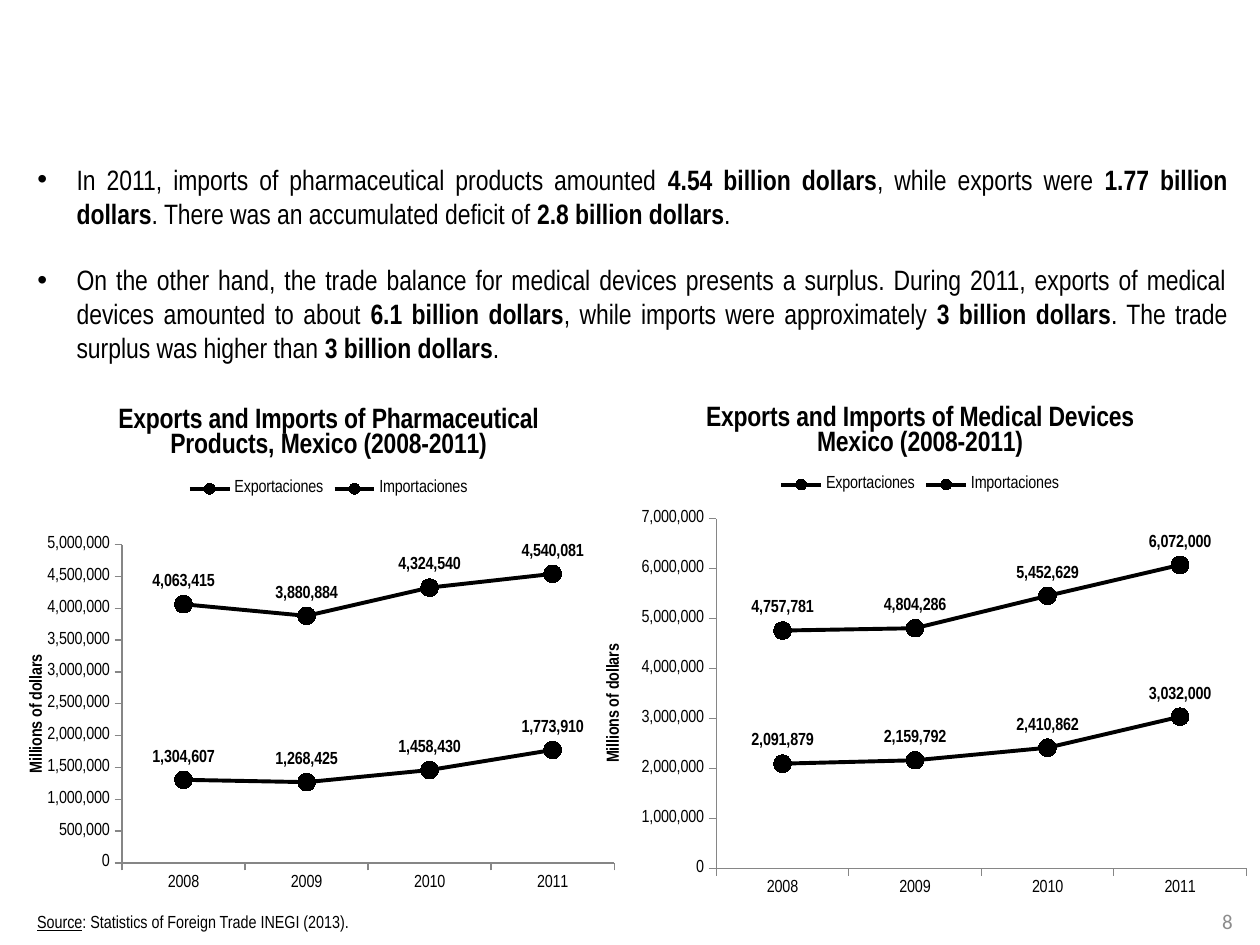
from dataclasses import dataclass

from lxml import etree
from pptx import Presentation
from pptx.chart.data import CategoryChartData
from pptx.dml.color import RGBColor
from pptx.enum.chart import (XL_CHART_TYPE, XL_LABEL_POSITION, XL_LEGEND_POSITION,
                             XL_MARKER_STYLE, XL_TICK_MARK)
from pptx.enum.text import MSO_ANCHOR, MSO_AUTO_SIZE, PP_ALIGN
from pptx.oxml.ns import qn
from pptx.util import Cm, Pt

LINES = XL_CHART_TYPE.LINE_MARKERS
ABOVE = XL_LABEL_POSITION.ABOVE
TOP = XL_LEGEND_POSITION.TOP
CIRCLE = XL_MARKER_STYLE.CIRCLE
OUT = XL_TICK_MARK.OUTSIDE
MIDDLE = MSO_ANCHOR.MIDDLE
FIXED = MSO_AUTO_SIZE.NONE
JUSTIFY, RIGHT, LEFT = PP_ALIGN.JUSTIFY, PP_ALIGN.RIGHT, PP_ALIGN.LEFT


@dataclass
class Theme:
    """Colours, fonts and type sizes."""
    ink: RGBColor = RGBColor(0, 0, 0)
    axis: RGBColor = RGBColor(0x86, 0x86, 0x86)
    gray: RGBColor = RGBColor(0x8C, 0x8C, 0x8C)
    face: str = "Arial Narrow"
    plain: str = "Calibri"
    head: Pt = Pt(16)
    page: Pt = Pt(12)
    small: Pt = Pt(10)


def apply(item, **values):
    """Set each named value on the item."""
    for name, value in values.items():
        setattr(item, name, value)


class Deck:
    """Hold the theme and the current slide."""

    def __init__(self, theme):
        self.theme = theme
        self.show = Presentation()
        apply(self.show, slide_width=Cm(25.4), slide_height=Cm(19.05))
        self.slide = self.show.slides.add_slide(self.show.slide_layouts[1])
        title = self.slide.shapes.title.element
        title.getparent().remove(title)

    def font(self, font, size, color=None, face=None, **more):
        """Style a font from the theme."""
        apply(font, size=size, name=face or self.theme.face, **more)
        font.color.rgb = color or self.theme.ink

    def list(self, box, items, gap):
        """Fill the body placeholder; odd parts of an item are bold."""
        body = self.slide.placeholders[1]
        apply(body, **dict(zip(("left", "top", "width", "height"), map(Cm, box))))
        frame = body.text_frame
        apply(frame, word_wrap=True, auto_size=FIXED)
        for i, item in enumerate(items):
            para = frame.paragraphs[0] if i == 0 else frame.add_paragraph()
            apply(para, alignment=JUSTIFY, line_spacing=1.0, space_before=gap if i else Pt(0))
            props = para._p.get_or_add_pPr()
            props.set("marL", str(Cm(0.79)))
            props.set("indent", str(-Cm(0.79)))
            for j, part in enumerate(item):
                run = para.add_run()
                run.text = part
                self.font(run.font, self.theme.head, bold=j % 2 == 1)

    def text(self, box, parts, size, align=LEFT, **style):
        """Add a one-line text box of (text, underline) parts."""
        frame = self.slide.shapes.add_textbox(*map(Cm, box)).text_frame
        apply(frame, word_wrap=True, vertical_anchor=MIDDLE)
        para = frame.paragraphs[0]
        para.alignment = align
        for words, under in parts:
            run = para.add_run()
            run.text = words
            self.font(run.font, size, underline=under, **style)

    def title(self, owner, words, size):
        """Write a bold title on a chart or an axis."""
        frame = owner.text_frame
        frame.text = words
        for para in frame.paragraphs:
            self.font(para.font, size, bold=True)
            for run in para.runs:
                self.font(run.font, size, bold=True)
        return frame

    def plot(self, chart, area):
        """Pin the inner plot area to fractions of the chart."""
        plot = chart._chartSpace.find(".//" + qn("c:plotArea"))
        for old in plot.findall(qn("c:layout")):
            plot.remove(old)
        layout = etree.Element(qn("c:layout"))
        manual = etree.SubElement(layout, qn("c:manualLayout"))
        pairs = [("layoutTarget", "inner"), ("xMode", "edge"), ("yMode", "edge")]
        for tag, value in pairs + list(zip("xywh", area)):
            etree.SubElement(manual, qn("c:" + tag)).set("val", str(value))
        plot.insert(0, layout)

    def chart(self, box, words, cats, series, area, top, step):
        """Add a line chart with markers and value labels."""
        theme = self.theme
        data = CategoryChartData(number_format="#,##0")
        data.categories = cats
        for name, values in series.items():
            data.add_series(name, values)
        chart = self.slide.shapes.add_chart(LINES, *map(Cm, box), data).chart
        self.font(chart.font, theme.small)
        self.title(chart.chart_title, words, theme.head)
        chart.has_legend = True
        apply(chart.legend, position=TOP, include_in_layout=False)
        self.plot(chart, area)
        value = chart.value_axis
        apply(value, minimum_scale=0, maximum_scale=top, major_unit=step,
              has_major_gridlines=False)
        apply(value.tick_labels, number_format="#,##0", number_format_is_linked=False)
        for axis in (chart.category_axis, value):
            axis.major_tick_mark = OUT
            axis.format.line.width = Pt(0.75)
            axis.format.line.color.rgb = theme.axis
        frame = self.title(value.axis_title, "Millions of dollars", theme.small)
        frame._txBody.bodyPr.set("rot", "-5400000")
        frame._txBody.bodyPr.set("vert", "horz")
        chart.plots[0].vary_by_categories = False
        for line in chart.plots[0].series:
            self.line(line)

    def line(self, line):
        """Style one series with its markers and labels."""
        line.smooth = False
        line.format.line.width = Pt(2.25)
        line.format.line.color.rgb = self.theme.ink
        apply(line.marker, style=CIRCLE, size=10)
        fill = line.marker.format.fill
        fill.solid()
        fill.fore_color.rgb = self.theme.ink
        line.marker.format.line.color.rgb = self.theme.ink
        apply(line.data_labels, show_value=True, position=ABOVE,
              number_format="#,##0", number_format_is_linked=False)
        self.font(line.data_labels.font, self.theme.small, bold=True)


def main():
    """Build the trade slide."""
    theme = Theme()
    deck = Deck(theme)
    deck.text((19.2, 18.19, 5.9, 0.74), [("8", False)], theme.page, RIGHT,
              color=theme.gray, face=theme.plain)
    deck.list((0.5, 3.15, 24.5, 4.37), [
        ("In 2011, imports of pharmaceutical products amounted ", "4.54 billion dollars",
         ", while exports were ", "1.77 billion dollars",
         ". There was an accumulated deficit of ", "2.8 billion dollars", "."),
        ("On the other hand, the trade balance for medical devices presents a surplus. "
         "During 2011, exports of medical devices amounted to about ", "6.1 billion dollars",
         ", while imports were approximately ", "3 billion dollars",
         ". The trade surplus was higher than ", "3 billion dollars", "."),
    ], Pt(19))
    deck.text((0.5, 18.24, 8.3, 0.69),
              [("Source", True), (": Statistics of Foreign Trade INEGI (2013).", False)],
              theme.small)
    years = ["2008", "2009", "2010", "2011"]
    deck.chart((0.5, 7.72, 12.25, 10.52),
               "Exports and Imports of Pharmaceutical Products, Mexico (2008-2011)", years,
               {"Exportaciones": (1304607, 1268425, 1458430, 1773910),
                "Importaciones": (4063415, 3880884, 4324540, 4540081)},
               (0.16, 0.31, 0.81, 0.61), 5000000, 500000)
    deck.chart((11.7, 7.72, 13.7, 10.52),
               "Exports and Imports of Medical Devices\nMexico (2008-2011)", years,
               {"Exportaciones": (4757781, 4804286, 5452629, 6072000),
                "Importaciones": (2091879, 2159792, 2410862, 3032000)},
               (0.2, 0.26, 0.78, 0.67), 7000000, 1000000)
    deck.show.save("out.pptx")


if __name__ == "__main__":
    main()
